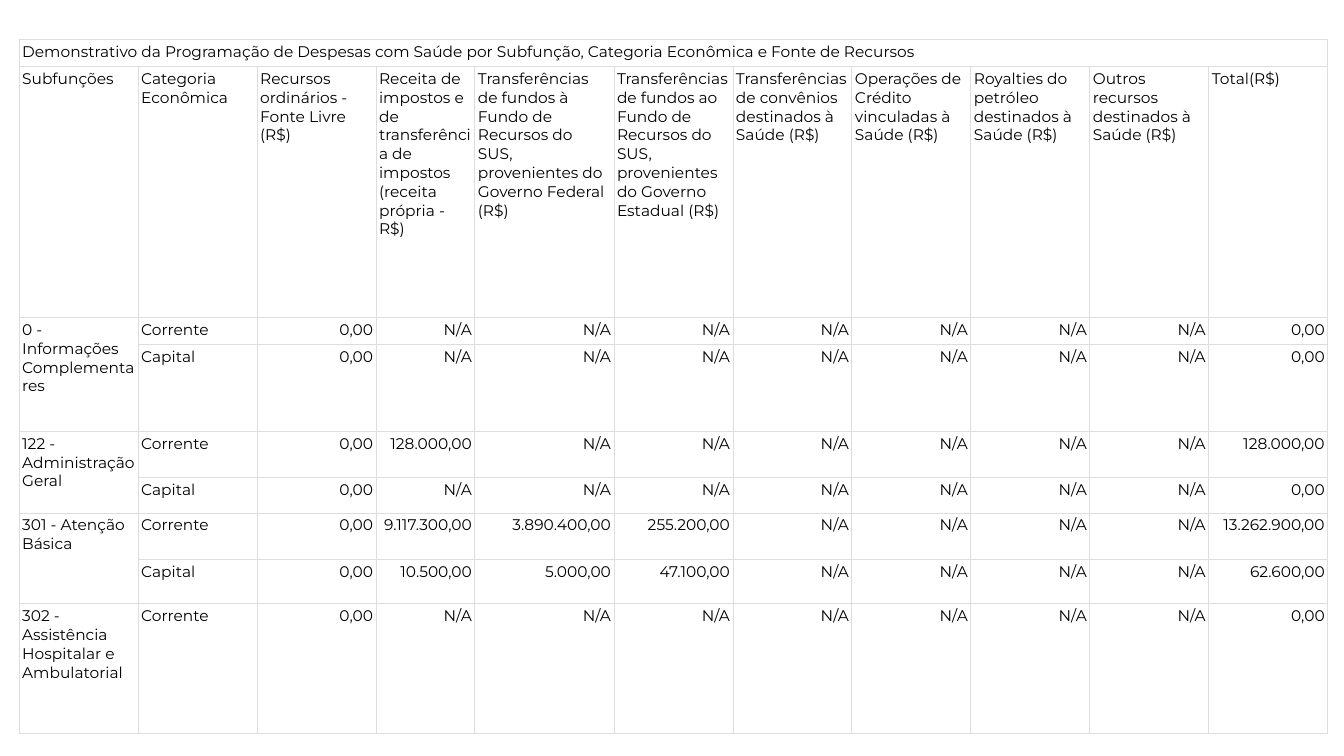
from pptx import Presentation, util as u
from pptx.dml.color import RGBColor
from pptx.enum import text
from pptx.oxml import parse_xml
from pptx.oxml.ns import nsdecls

hues = {"ink": "000000", "paper": "FFFFFF", "rule": "DDDDDD"}
face = {"name": "Montserrat", "size": u.Pt(11), "bold": False}
pads = dict.fromkeys(
    ["margin_left", "margin_top", "margin_right", "margin_bottom"], u.Inches(0.03))
flags = dict.fromkeys(["first_row", "horz_banding"], False)

title = ("Demonstrativo da Programação de Despesas com Saúde por Subfunção, "
         "Categoria Econômica e Fonte de Recursos")
heads = [
    "Subfunções",
    "Categoria Econômica",
    "Recursos ordinários - Fonte Livre (R$)",
    "Receita de impostos e de transferência de impostos (receita própria - R$)",
    "Transferências de fundos à Fundo de Recursos do SUS, "
    "provenientes do Governo Federal (R$)",
    "Transferências de fundos ao Fundo de Recursos do SUS, "
    "provenientes do Governo Estadual (R$)",
    "Transferências de convênios destinados à Saúde (R$)",
    "Operações de Crédito vinculadas à Saúde (R$)",
    "Royalties do petróleo destinados à Saúde (R$)",
    "Outros recursos destinados à Saúde (R$)",
    "Total(R$)",
]
groups = [
    ("0 - Informações Complementares", [([], "0,00"), ([], "0,00")]),
    ("122 - Administração Geral", [(["128.000,00"], "128.000,00"), ([], "0,00")]),
    ("301 - Atenção Básica", [
        (["9.117.300,00", "3.890.400,00", "255.200,00"], "13.262.900,00"),
        (["10.500,00", "5.000,00", "47.100,00"], "62.600,00")]),
    ("302 - Assistência Hospitalar e Ambulatorial", [([], "0,00")]),
]
wides = [1.18] * 3 + [0.98, 1.38] + [1.18] * 6
highs = [0.27, 2.49, 0.27, 0.86, 0.46, 0.35, 0.46, 0.44, 1.29]

rows = [[title] + [""] * 10, heads]
spans = [(0, 0, 0, 10)]
for name, lines in groups:
    top = len(rows)
    for kind, (sums, total) in zip(["Corrente", "Capital"], lines):
        blanks = ["N/A"] * (7 - len(sums))
        label = name if kind == "Corrente" else ""
        rows.append([label, kind, "0,00", *sums, *blanks, total])
    if len(lines) > 1:
        spans.append((top, 0, top + 1, 0))

deck = Presentation()
deck.slide_width, deck.slide_height = u.Inches(13.33), u.Inches(7.5)
slide = deck.slides.add_slide(deck.slide_layouts[6])
grid = slide.shapes.add_table(
    len(rows), len(heads), u.Inches(0.19), u.Inches(0.39),
    u.Inches(sum(wides)), u.Inches(sum(highs))).table
for key, val in flags.items():
    setattr(grid, key, val)
for col, wide in zip(grid.columns, wides):
    col.width = u.Inches(wide)
for row, high in zip(grid.rows, highs):
    row.height = u.Inches(high)

for r, row in enumerate(rows):
    for c, words in enumerate(row):
        cell = grid.cell(r, c)
        for key, val in pads.items():
            setattr(cell, key, val)
        props = cell._tc.get_or_add_tcPr()
        for side in "LRTB":
            props.append(parse_xml(
                f'<a:ln{side} {nsdecls("a")} w="{u.Pt(0.75)}"><a:solidFill>'
                f'<a:srgbClr val="{hues["rule"]}"/></a:solidFill></a:ln{side}>'))
        cell.fill.solid()
        cell.fill.fore_color.rgb = RGBColor.from_string(hues["paper"])
        para = cell.text_frame.paragraphs[0]
        if r > 1 and c > 1:
            para.alignment = text.PP_ALIGN.RIGHT
        run = para.add_run()
        run.text = words
        for key, val in face.items():
            setattr(run.font, key, val)
        run.font.color.rgb = RGBColor.from_string(hues["ink"])

for top, left, end, right in spans:
    grid.cell(top, left).merge(grid.cell(end, right))

deck.save("out.pptx")
